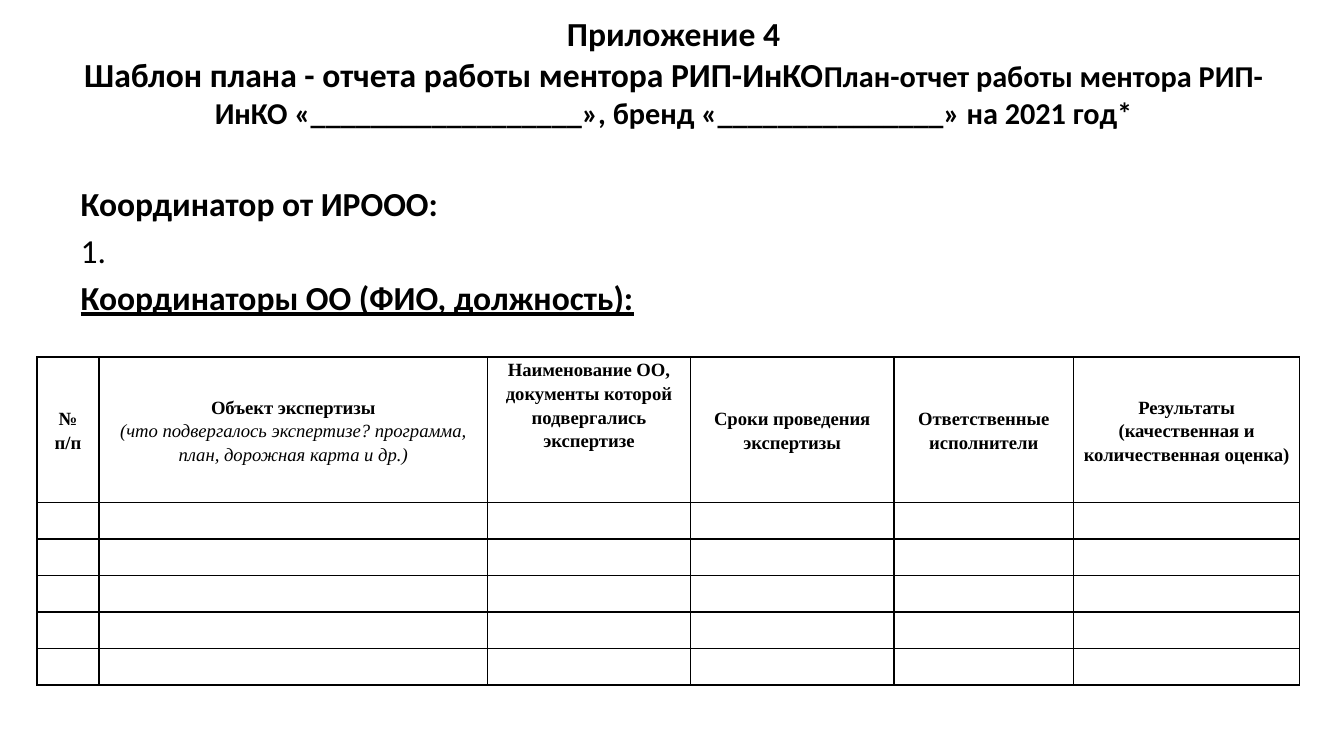
from lxml.etree import SubElement
from pptx import Presentation
from pptx.dml.color import RGBColor
from pptx.enum.text import MSO_ANCHOR, MSO_AUTO_SIZE, PP_ALIGN
from pptx.oxml.ns import qn
from pptx.util import Cm, Pt


def color(hex_string):
    return RGBColor.from_string(hex_string)


def add_text(paragraph, text, size=18, font="Calibri", bold=True,
             italic=False, underline=False, ink="000000"):
    run = paragraph.add_run()
    run.text = text
    style = run.font
    style.size, style.name = Pt(size), font
    style.bold, style.italic, style.underline = bold, italic, underline
    style.color.rgb = color(ink)


class PlanSlide:
    ink = "000000"
    paper = "FFFFFF"
    table_font = "Times New Roman"
    table_size = 10

    def __init__(self, presentation):
        self.slide = presentation.slides.add_slide(presentation.slide_layouts[1])

    def place(self, placeholder, left, top, width, height):
        placeholder.left, placeholder.top = Cm(left), Cm(top)
        placeholder.width, placeholder.height = Cm(width), Cm(height)
        frame = placeholder.text_frame
        frame.word_wrap = True
        frame.auto_size = MSO_AUTO_SIZE.NONE
        return frame

    def title(self, lines, box):
        """Each line is a list of (text, size) pairs."""
        frame = self.place(self.slide.shapes.title, *box)
        frame.vertical_anchor = MSO_ANCHOR.BOTTOM
        frame.margin_bottom = Cm(0.69)
        heading = frame.paragraphs[0]
        heading.alignment = PP_ALIGN.CENTER
        for index, line in enumerate(lines):
            if index:
                heading.add_line_break()
            for text, size in line:
                add_text(heading, text, size=size, ink=self.ink)

    def body(self, items, box):
        frame = self.place(self.slide.placeholders[1], *box)
        for index, (text, style) in enumerate(items):
            item = frame.add_paragraph() if index else frame.paragraphs[0]
            item.space_before = Pt(3.6)
            properties = item._p.get_or_add_pPr()
            properties.set("marL", "0")
            properties.set("indent", "0")
            SubElement(properties, qn("a:buNone"))
            add_text(item, text, ink=self.ink, **style)

    def border(self, cell):
        properties = cell._tc.get_or_add_tcPr()
        for side in ("a:lnL", "a:lnR", "a:lnT", "a:lnB"):
            line = SubElement(properties, qn(side), w=str(Pt(1)))
            fill = SubElement(line, qn("a:solidFill"))
            SubElement(fill, qn("a:srgbClr"), val=self.ink)

    def fill_cell(self, cell, lines, anchor):
        cell.margin_left = cell.margin_right = Cm(0.15)
        cell.margin_top = cell.margin_bottom = 0
        cell.vertical_anchor = anchor
        self.border(cell)
        cell.fill.solid()
        cell.fill.fore_color.rgb = color(self.paper)
        frame = cell.text_frame
        for index, (text, style) in enumerate(lines):
            paragraph = frame.add_paragraph() if index else frame.paragraphs[0]
            paragraph.alignment = PP_ALIGN.CENTER
            paragraph.line_spacing = 1.15
            add_text(paragraph, text, size=self.table_size,
                     font=self.table_font, ink=self.ink, **style)
        if not lines:
            # The end mark keeps an empty row from growing to the default size
            SubElement(frame.paragraphs[0]._p, qn("a:endParaRPr"),
                       sz=str(self.table_size * 100))

    def table(self, headers, widths, heights, left, top):
        grid = self.slide.shapes.add_table(
            len(heights), len(widths), Cm(left), Cm(top),
            Cm(sum(widths)), Cm(sum(heights))).table
        grid.first_row = grid.horz_banding = False
        for column, width in zip(grid.columns, widths):
            column.width = Cm(width)
        for row, height in zip(grid.rows, heights):
            row.height = Cm(height)
        for row_index, row in enumerate(grid.rows):
            for cell, (lines, anchor) in zip(row.cells, headers):
                self.fill_cell(cell, [] if row_index else lines, anchor)


def main():
    presentation = Presentation()
    presentation.slide_width, presentation.slide_height = Cm(25.4), Cm(14.29)
    plan = PlanSlide(presentation)

    plan.title(
        [[("Приложение 4", 18)],
         [("Шаблон плана - отчета работы ментора РИП-ИнКО", 18),
          ("План-отчет работы ментора РИП-ИнКО «__________________», "
           "бренд «_______________» на 2021 год*", 16.2)]],
        (1.3, 1.35, 22.86, 1.8))

    plan.body(
        [("Координатор от ИРООО:", {}),
         ("1.", {"bold": False}),
         ("Координаторы ОО (ФИО, должность):", {"underline": True})],
        (1.27, 3.33, 22.86, 9.42))

    middle, top = MSO_ANCHOR.MIDDLE, MSO_ANCHOR.TOP
    headers = [
        ([("№ п/п", {})], middle),
        ([("Объект экспертизы", {}),
          ("(что подвергалось экспертизе? программа, план, дорожная карта и др.)",
           {"bold": False, "italic": True})], middle),
        ([("Наименование ОО, документы которой подвергались экспертизе", {})], top),
        ([("Сроки проведения экспертизы", {})], middle),
        ([("Ответственные исполнители", {})], middle),
        ([("Результаты (качественная и количественная оценка)", {})], middle),
    ]
    plan.table(headers, widths=[1.17, 7.34, 3.84, 3.84, 3.4, 4.27],
               heights=[2.75] + [0.69] * 5, left=0.7, top=6.75)

    presentation.save("out.pptx")


if __name__ == "__main__":
    main()
